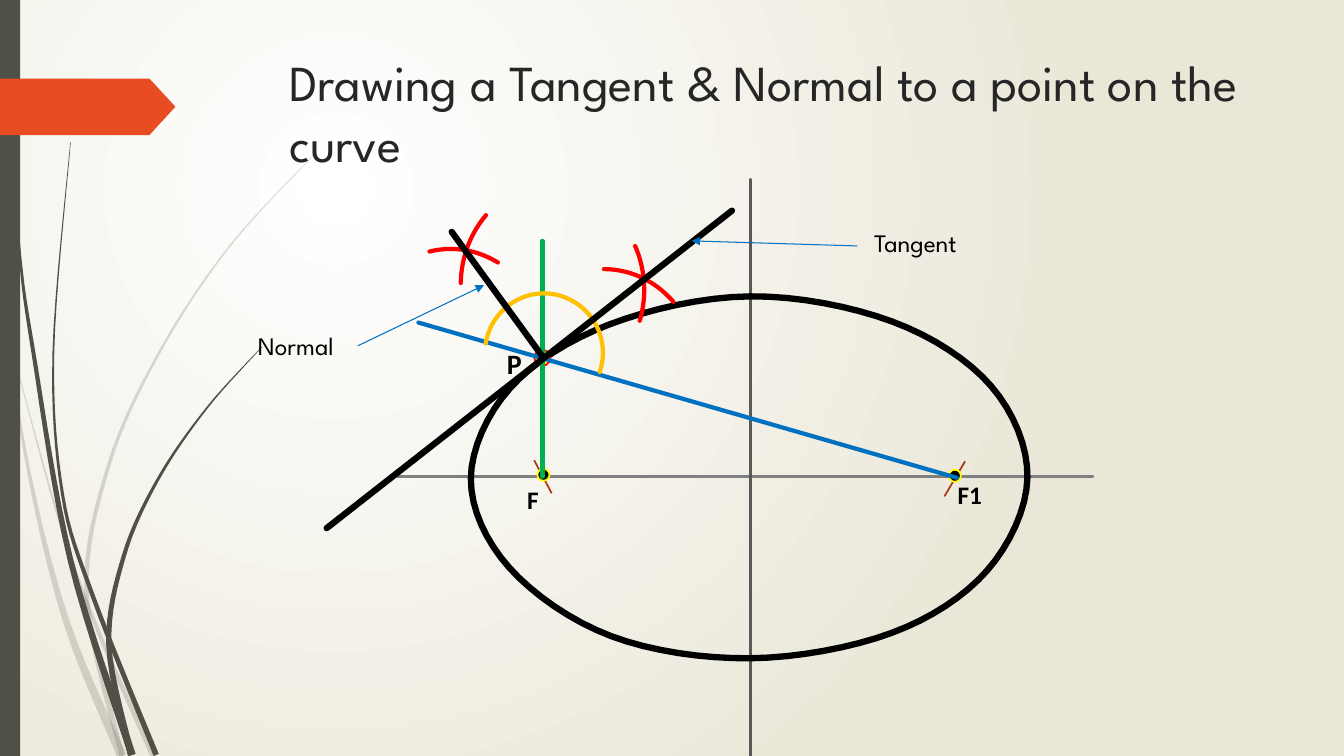
import math

import pptx
import pptx.util
import pptx.dml.color
import pptx.enum.shapes
import pptx.enum.text
import pptx.oxml.ns
import lxml.etree

PX = 9144
SIZE = (1333, 750)
CURVE_STEPS = 8

THEME = {
    "light": "FFFFFF", "cream": "EAE7D8", "stem": "505046", "flag": "E84C22",
    "title": "262626", "ink": "000000", "axis": "808080", "minor_axis": "595959",
    "tick": "AC3819", "focus": "FFFF00", "red": "FF0000", "green": "00B050",
    "blue": "0070C0", "amber": "FFC000",
    "display": "League Spartan", "label": "Calibri",
    "title_size": 36, "point_size": 20, "label_size": 18,
    "hair": 0.75, "thin": 1.25, "axis_width": 2.25, "medium": 3, "heavy": 4.5,
}

PALE_STEMS = [
    (9, [(0, 290), (29, 470), (67, 620), (121, 750)]),
    (5, [(13, 350), (60, 521), (99, 630), (152, 750)]),
    (5, [(312, 153), (228, 244), (159, 348), (108, 461), (86, 590), (121, 750)]),
]
DARK_STEMS = [
    (7, [(4, 0), (18, 233), (34, 355), (70, 556), (131, 749)]),
    (5, [(70, 141), (53, 349), (62, 490), (92, 591), (155, 749)]),
    (6, [(260, 344), (205, 405), (157, 475), (123, 551), (108, 640), (130, 749)]),
]
ELLIPSE = [(467, 475), (506, 385), (604, 322), (744, 294), (885, 319), (983, 383),
           (1019, 474), (979, 566), (884, 628), (744, 653), (606, 631), (505, 563)]
BAR = (0, 0, 20, 750)
FLAG = (0, 78, 174, 56)
FLAG_POINT = 0.46
ARC_SIZES = {"amber": (118, 118), "red": (188, 203)}

CONSTRUCTION = [
    ("line", (394, 473, 1084, 473), "axis", "axis_width"),
    ("line", (744, 178, 744, 775), "minor_axis", "axis_width"),
    ("curve", ELLIPSE, "ink", "heavy"),
    ("line", (530, 457, 547, 489), "tick", "thin"),
    ("line", (957, 458, 937, 492), "tick", "thin"),
    ("dot", (533, 465, 12, 12), "focus", "thin", "ink"),
    ("dot", (941, 466, 12, 12), "focus", "thin", "ink"),
    ("dot", (530, 347, 16, 16), "red", "thin", "focus"),
    ("line", (538, 473, 538, 239), "green", "medium"),
    ("line", (949, 474, 415, 320), "blue", "medium"),
    ("arc", (480, 291), "amber", "medium", (270, 19)),
    ("arc", (451, 186), "red", "medium", (333, 19)),
    ("arc", (505, 267), "red", "medium", (270, 315)),
    ("line", (324, 524, 726, 209), "ink", "heavy"),
    ("arc", (481, 291), "amber", "medium", (189, 270)),
    ("arc", (353, 247), "red", "medium", (258, 298)),
    ("arc", (457, 181), "red", "medium", (181, 225)),
    ("line", (448, 230, 539, 355), "ink", "heavy"),
    ("arrow", (355, 343, 480, 283), "blue", "hair"),
    ("arrow", (850, 244, 686, 239), "blue", "hair"),
]
TITLE = ("Drawing a Tangent & Normal to a point on the curve", (277, 41, 975, 140))
LABELS = [
    ("F", (513, 476, 34, 40), "label", "label_size", True),
    ("F1", (940, 471, 54, 40), "label", "label_size", True),
    ("P", (493, 339, 37, 44), "label", "point_size", True),
    ("Tangent", (857, 221, 121, 40), "display", "label_size", False),
    ("Normal", (246, 323, 109, 40), "display", "label_size", False),
]

deck = pptx.Presentation()
deck.slide_width, deck.slide_height = (side * PX for side in SIZE)
page = deck.slides.add_slide(deck.slide_layouts[6])


def emu(lengths):
    return [round(length * PX) for length in lengths]


def color(name):
    return pptx.dml.color.RGBColor.from_string(THEME[name])


def child(parent, tag, **attributes):
    return lxml.etree.SubElement(parent, pptx.oxml.ns.qn(tag), attributes)


def find(shape, tag):
    return shape.element.find(".//" + pptx.oxml.ns.qn(tag))


def stroke(shape, line, width):
    if not line:
        shape.line.fill.background()
        return
    shape.line.color.rgb = color(line)
    shape.line.width = pptx.util.Pt(THEME[width])
    find(shape, "a:ln").set("cap", "rnd")


def dress(shape, fill=None, line=None, width=None):
    shape.shadow.inherit = False
    if fill:
        shape.fill.solid()
        shape.fill.fore_color.rgb = color(fill)
    else:
        shape.fill.background()
    stroke(shape, line, width)


def smooth(knots, closed=False):
    if closed:
        padded = [knots[-1], *knots, *knots[:2]]
    else:
        padded = [knots[0], *knots, knots[-1]]
    points = [padded[1]]
    for a, b, c, d in zip(padded, padded[1:], padded[2:], padded[3:]):
        for step in range(1, CURVE_STEPS + 1):
            t = step / CURVE_STEPS
            points.append(tuple(
                q + t * (r - p + t * (2 * p - 5 * q + 4 * r - s + t * (3 * q - p - 3 * r + s))) / 2
                for p, q, r, s in zip(a, b, c, d)))
    return points


def taper(spine, thickness):
    left, right = [], []
    last = len(spine) - 1
    for index, (x, y) in enumerate(spine):
        (x1, y1), (x2, y2) = spine[max(index - 1, 0)], spine[min(index + 1, last)]
        reach = (0.5 + thickness * index / last) / 2 / math.hypot(x2 - x1, y2 - y1)
        across, down = (y2 - y1) * reach, (x1 - x2) * reach
        left.append((x + across, y + down))
        right.append((x - across, y - down))
    return left + right[::-1]


def add_outline(shapes, points, **look):
    corners = [emu(point) for point in points]
    builder = shapes.build_freeform(*corners[0], scale=1.0)
    builder.add_line_segments(corners[1:], close=True)
    shape = builder.convert_to_shape()
    dress(shape, **look)
    return shape


def add_stems(stems, opacity=100):
    group = page.shapes.add_group_shape()
    for thickness, knots in stems:
        shape = add_outline(group.shapes, taper(smooth(knots), thickness), fill="stem")
        if opacity < 100:
            child(find(shape, "a:srgbClr"), "a:alpha", val=str(opacity * 1000))


def add_line(ends, line, width, arrow=False):
    straight = pptx.enum.shapes.MSO_CONNECTOR.STRAIGHT
    connector = page.shapes.add_connector(straight, *emu(ends))
    stroke(connector, line, width)
    child(connector.element.spPr, "a:effectLst")
    if arrow:
        child(find(connector, "a:ln"), "a:tailEnd", type="triangle")


def add_preset(name, place, **look):
    shape = page.shapes.add_shape(pptx.enum.shapes.MSO_SHAPE[name], *emu(place))
    dress(shape, **look)
    return shape


def add_text(text, place, *, font, size, ink="ink", bold=False, wrap=False, middle=False):
    box = page.shapes.add_textbox(*emu(place))
    frame = box.text_frame
    frame.word_wrap = wrap
    if middle:
        frame.vertical_anchor = pptx.enum.text.MSO_ANCHOR.MIDDLE
    else:
        frame.auto_size = pptx.enum.text.MSO_AUTO_SIZE.SHAPE_TO_FIT_TEXT
    span = frame.paragraphs[0].add_run()
    span.text = text
    span.font.name = THEME[font]
    span.font.size = pptx.util.Pt(THEME[size])
    span.font.bold = bold
    span.font.color.rgb = color(ink)


def paint_background():
    fill = page.background.fill
    fill.gradient()
    for stop, name, position in zip(fill.gradient_stops, ("light", "cream"), (0, 1)):
        stop.color.rgb = color(name)
        stop.position = position
    gradient = find(page, "a:gradFill")
    gradient.remove(find(page, "a:lin"))
    radial = child(gradient, "a:path")
    radial.set("path", "circle")
    child(radial, "a:fillToRect", l="50000", t="50000", r="100000", b="100000")


def add_construction():
    for kind, place, line, width, *extra in CONSTRUCTION:
        if kind in ("line", "arrow"):
            add_line(place, line, width, arrow=kind == "arrow")
        elif kind == "curve":
            add_outline(page.shapes, smooth(place, closed=True), line=line, width=width)
        elif kind == "dot":
            add_preset("OVAL", place, fill=extra[0], line=line, width=width)
        else:
            arc = add_preset("ARC", place + ARC_SIZES[line], line=line, width=width)
            for index, degrees in enumerate(extra[0]):
                arc.adjustments[index] = degrees * 0.6


paint_background()
add_stems(PALE_STEMS, opacity=20)
add_stems(DARK_STEMS)
add_preset("RECTANGLE", BAR, fill="stem")
add_preset("PENTAGON", FLAG, fill="flag").adjustments[0] = FLAG_POINT
add_text(*TITLE, font="display", size="title_size", ink="title", wrap=True, middle=True)
add_construction()
for text, place, font, size, bold in LABELS:
    add_text(text, place, font=font, size=size, bold=bold, wrap=text == "F1")
deck.save("out.pptx")
